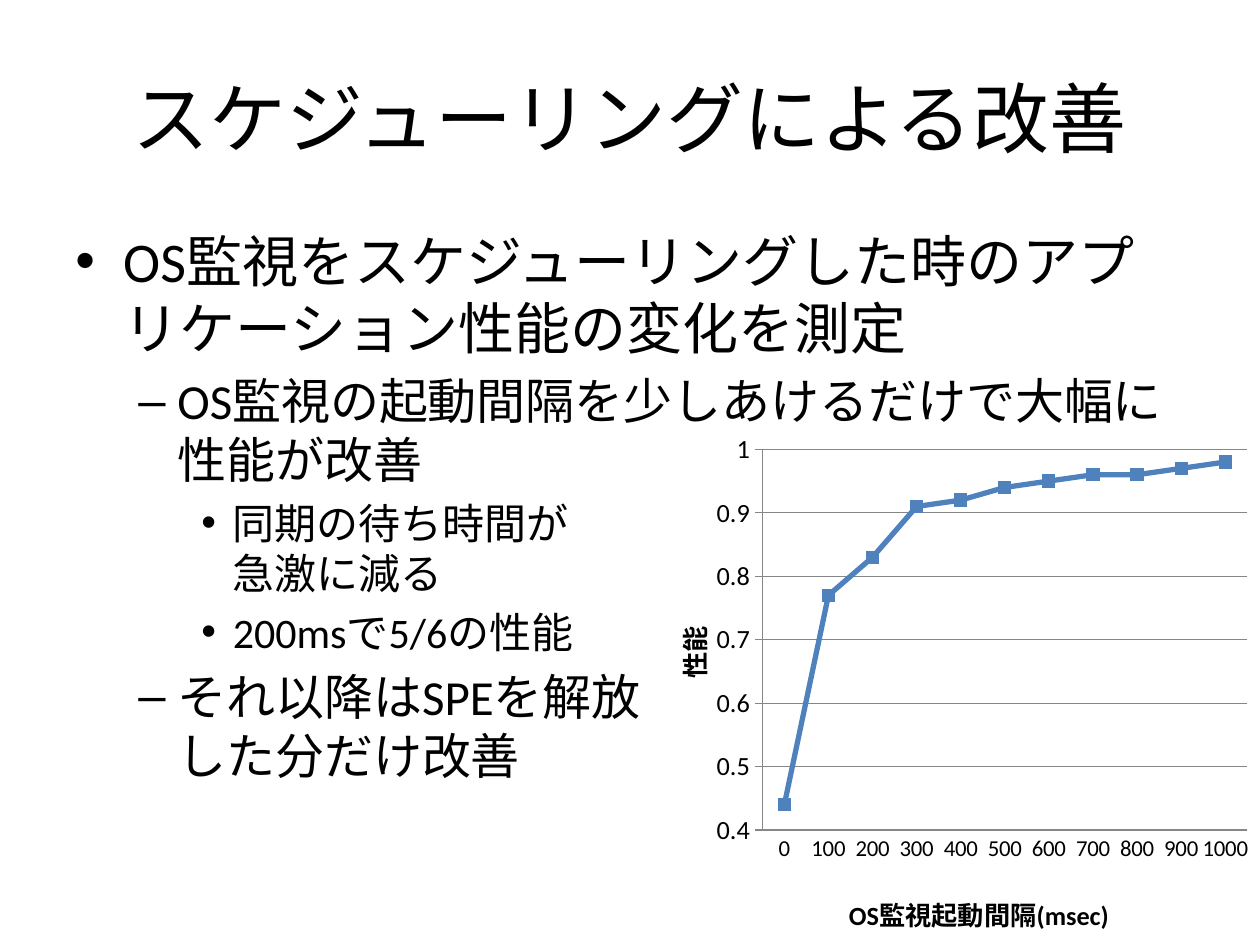
from lxml.etree import SubElement
from pptx import Presentation
from pptx.chart.data import CategoryChartData
from pptx.dml.color import RGBColor
from pptx.enum.chart import XL_CHART_TYPE, XL_MARKER_STYLE, XL_TICK_MARK
from pptx.enum.text import MSO_ANCHOR, PP_ALIGN
from pptx.oxml import parse_xml
from pptx.oxml.ns import nsdecls, qn
from pptx.util import Inches, Pt

BLACK = RGBColor(0x00, 0x00, 0x00)
GRAY = RGBColor(0x86, 0x86, 0x86)
BLUE = RGBColor(0x4F, 0x81, 0xBD)
FONT = "Calibri"

# level: text size, left margin, hanging indent, bullet
LEVELS = [
    (32, 0.38, 0.38, "•"),
    (28, 0.81, 0.31, "–"),
    (24, 1.25, 0.25, "•"),
]
POINTS = [
    (0, "OS監視をスケジューリングした時のアプリケーション性能の変化を測定"),
    (1, "OS監視の起動間隔を少しあけるだけで大幅に\n性能が改善"),
    (2, "同期の待ち時間が\n急激に減る"),
    (2, "200msで5/6の性能"),
    (1, "それ以降はSPEを解放\nした分だけ改善"),
]
SPEED = [0.44, 0.77, 0.83, 0.91, 0.92, 0.94, 0.95, 0.96, 0.96, 0.97, 0.98]


def style(font, size, bold=False):
    font.name = FONT
    font.size = Pt(size)
    font.bold = bold
    font.color.rgb = BLACK


def write(para, text, size, bold=False, align=None):
    """Fill a paragraph; a newline in the text becomes a line break."""
    para.text = text
    para.alignment = align
    for run in para.runs:
        style(run.font, size, bold)


def place(node, index, **parts):
    """Set the manual layout of a plot area or title, in chart fractions."""
    old = node.find(qn("c:layout"))
    if old is not None:
        node.remove(old)
    inner = '<c:layoutTarget val="inner"/>' if "w" in parts else ""
    modes = "".join(f'<c:{k}Mode val="edge"/>' for k in "xy")
    sizes = "".join(f'<c:{k} val="{v}"/>' for k, v in parts.items())
    node.insert(index, parse_xml(
        f'<c:layout {nsdecls("c")}><c:manualLayout>{inner}{modes}{sizes}'
        "</c:manualLayout></c:layout>"))


class Deck:
    def __init__(self):
        self.prs = Presentation()
        self.prs.slide_width = Inches(10)
        self.prs.slide_height = Inches(7.5)
        self.slide = self.prs.slides.add_slide(self.prs.slide_layouts[6])

    def frame(self, x, y, w, h, anchor=MSO_ANCHOR.TOP):
        box = self.slide.shapes.add_textbox(
            Inches(x), Inches(y), Inches(w), Inches(h))
        box.text_frame.word_wrap = True
        box.text_frame.vertical_anchor = anchor
        return box.text_frame

    def title(self, text):
        frame = self.frame(0.5, 0.3, 9, 1.25, MSO_ANCHOR.MIDDLE)
        write(frame.paragraphs[0], text, 44, align=PP_ALIGN.CENTER)

    def bullets(self, points):
        frame = self.frame(0.5, 1.75, 9, 4.95)
        for i, (level, text) in enumerate(points):
            para = frame.add_paragraph() if i else frame.paragraphs[0]
            size, left, hang, mark = LEVELS[level]
            write(para, text, size)
            para.level = level
            para.space_before = Pt(size * 0.2)
            props = para._p.get_or_add_pPr()
            props.set("marL", str(Inches(left)))
            props.set("indent", str(-Inches(hang)))
            SubElement(props, qn("a:buFont")).set("typeface", "Arial")
            SubElement(props, qn("a:buChar")).set("char", mark)

    def axis(self, axis, text, size, tick, x, y):
        write(axis.axis_title.text_frame.paragraphs[0], text, 15, bold=True)
        place(axis.axis_title._element, 1, x=x, y=y)
        style(axis.tick_labels.font, size)
        axis.major_tick_mark = tick
        axis.minor_tick_mark = XL_TICK_MARK.NONE
        axis.format.line.color.rgb = GRAY

    def chart(self, values):
        data = CategoryChartData()
        data.categories = [str(100 * i) for i in range(len(values))]
        data.add_series("Series 1", values)
        chart = self.slide.shapes.add_chart(
            XL_CHART_TYPE.LINE_MARKERS, Inches(5), Inches(3.36),
            Inches(5), Inches(4.14), data).chart
        chart.has_title = False
        chart.has_legend = False
        style(chart.font, 10)

        self.axis(chart.category_axis, "OS監視起動間隔(msec)", 13,
                  XL_TICK_MARK.NONE, 0.34, 0.89)
        speed = chart.value_axis
        self.axis(speed, "性能", 15, XL_TICK_MARK.OUTSIDE, 0.06, 0.38)
        speed.minimum_scale = 0.4
        speed.maximum_scale = 1
        speed.major_unit = 0.1
        speed.has_major_gridlines = True
        speed.major_gridlines.format.line.color.rgb = GRAY
        place(chart._chartSpace.chart.plotArea, 0, x=0.21, y=0.05, w=0.77, h=0.73)

        plot = chart.plots[0]
        plot.vary_by_categories = False
        line = plot.series[0]
        line.smooth = False
        line.format.line.color.rgb = BLUE
        line.format.line.width = Pt(3)
        line.marker.style = XL_MARKER_STYLE.SQUARE
        line.marker.size = 7
        line.marker.format.fill.solid()
        line.marker.format.fill.fore_color.rgb = BLUE
        line.marker.format.line.color.rgb = BLUE


def main():
    deck = Deck()
    deck.title("スケジューリングによる改善")
    deck.bullets(POINTS)
    deck.chart(SPEED)
    deck.prs.save("out.pptx")


if __name__ == "__main__":
    main()
